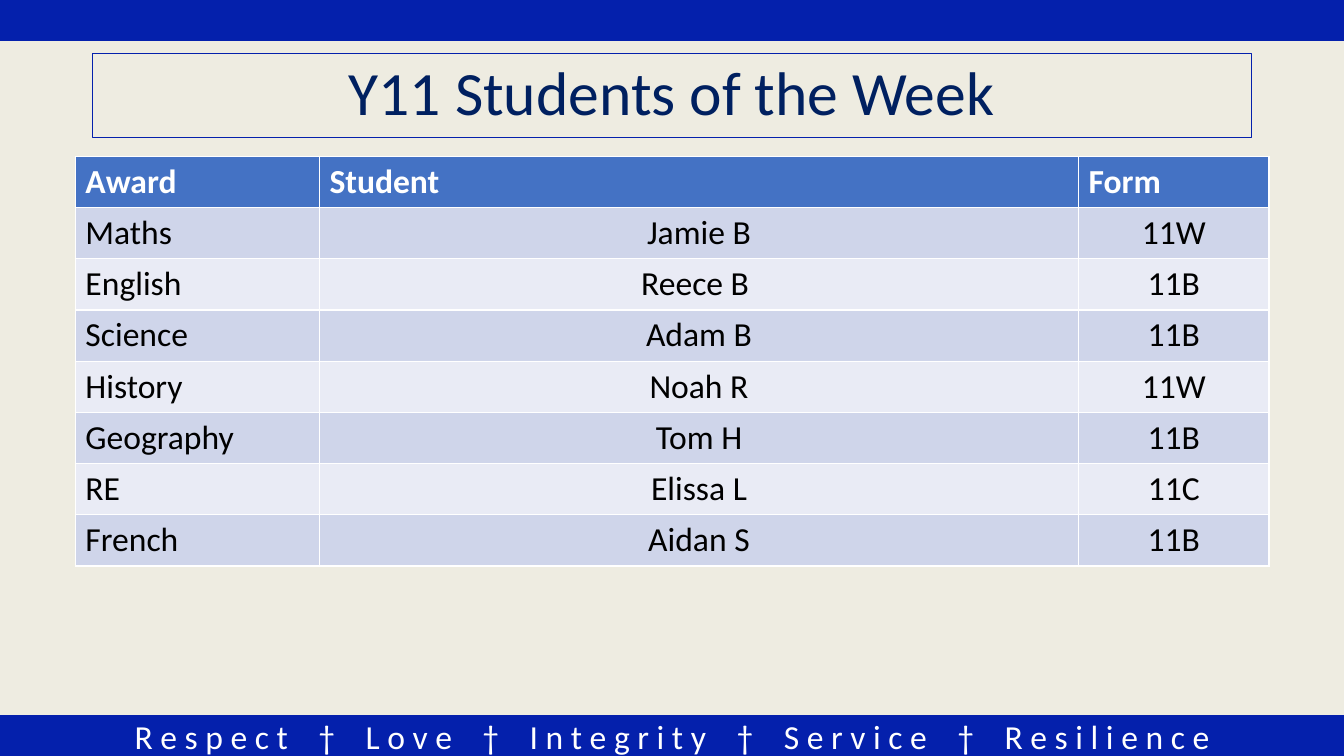
from pptx import Presentation
from pptx.dml.color import RGBColor
from pptx.enum.shapes import MSO_SHAPE
from pptx.enum.text import MSO_ANCHOR, PP_ALIGN
from pptx.util import Cm, Pt

RECTANGLE = MSO_SHAPE.RECTANGLE
CENTER = PP_ALIGN.CENTER
MIDDLE, BOTTOM = MSO_ANCHOR.MIDDLE, MSO_ANCHOR.BOTTOM

CREAM = RGBColor(0xEE, 0xEC, 0xE1)
BLUE = RGBColor(0x04, 0x20, 0xAC)
NAVY = RGBColor(0x00, 0x20, 0x60)
HEADER = RGBColor(0x44, 0x72, 0xC4)
BAND_DARK = RGBColor(0xCF, 0xD5, 0xEA)
BAND_LIGHT = RGBColor(0xE9, 0xEB, 0xF5)
WHITE = RGBColor(0xFF, 0xFF, 0xFF)
BLACK = RGBColor(0x00, 0x00, 0x00)

VALUES = ["Respect", "Love", "Integrity", "Service", "Resilience"]
AWARDS = [
    ("Award", "Student", "Form"),
    ("Maths", "Jamie B", "11W"),
    ("English", "Reece B ", "11B"),
    ("Science", "Adam B", "11B"),
    ("History", "Noah R", "11W"),
    ("Geography", "Tom H", "11B"),
    ("RE", "Elissa L", "11C"),
    ("French", "Aidan S", "11B"),
]


def add_box(left, top, width, height, line_width):
    sp = slide.shapes.add_shape(RECTANGLE, Cm(left), Cm(top), Cm(width), Cm(height))
    sp.shadow.inherit = False
    sp.line.color.rgb = BLUE
    sp.line.width = Pt(line_width)
    sp.text_frame.vertical_anchor = MIDDLE
    return sp


def set_font(p, size, color, bold=False):
    p.font.name = "Calibri"
    p.font.size = Pt(size)
    p.font.bold = bold
    p.font.color.rgb = color


prs = Presentation()
prs.slide_width, prs.slide_height = Cm(33.87), Cm(19.05)
slide = prs.slides.add_slide(prs.slide_layouts[6])
slide.background.fill.solid()
slide.background.fill.fore_color.rgb = CREAM

# Bands along the bottom and top edges
footer = add_box(0, 18.03, 33.87, 1.02, 1)
header = add_box(0, 0, 33.87, 1.02, 1)
for band in (footer, header):
    band.fill.solid()
    band.fill.fore_color.rgb = BLUE

# School values, with widened tracking around each dagger
p = footer.text_frame.paragraphs[0]
p.alignment = CENTER
set_font(p, 24, WHITE)
for i, value in enumerate(VALUES):
    if i:
        r = p.add_run()
        r.text = " †"
        r._r.get_or_add_rPr().set("spc", "1630")
        p.add_run().text = " "
    p.add_run().text = " ".join(value)

# Title
title = add_box(2.33, 1.35, 29.21, 2.11, 0.75)
title.fill.background()
p = title.text_frame.paragraphs[0]
p.text = "Y11 Students of the Week"
p.alignment = CENTER
p.line_spacing = 0.9
set_font(p, 44, NAVY)

# Awards table
table = slide.shapes.add_table(
    len(AWARDS), 3, Cm(1.9), Cm(3.94), Cm(30.08), Cm(10.32)
).table
for column, width in zip(table.columns, (6.15, 19.13, 4.8)):
    column.width = Cm(width)
for i, award in enumerate(AWARDS):
    table.rows[i].height = Cm(1.29)
    band_color = BAND_DARK if i % 2 else BAND_LIGHT
    for j, text in enumerate(award):
        cell = table.cell(i, j)
        cell.fill.solid()
        cell.fill.fore_color.rgb = band_color if i else HEADER
        p = cell.text_frame.paragraphs[0]
        p.text = text
        set_font(p, 24, BLACK if i else WHITE, bold=i == 0)
        if i and j:
            p.alignment = CENTER
            cell.vertical_anchor = BOTTOM
            cell.margin_left = cell.margin_right = cell.margin_top = Cm(0.03)
            cell.margin_bottom = Cm(0.13)

prs.save("out.pptx")
